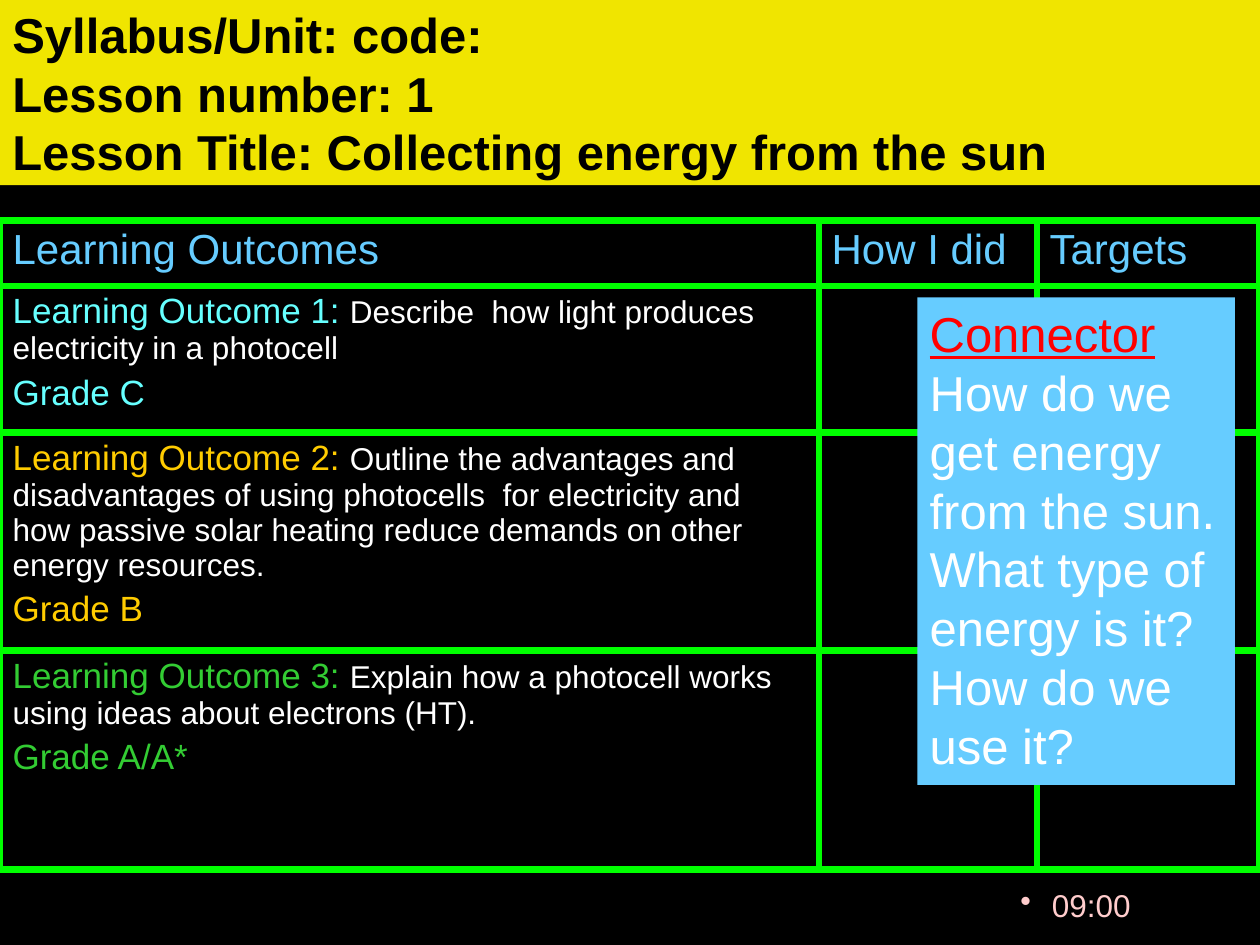
from lxml import etree
from pptx import Presentation
from pptx.dml.color import RGBColor
from pptx.enum.shapes import MSO_SHAPE
from pptx.enum.text import MSO_ANCHOR, MSO_AUTO_SIZE, PP_ALIGN
from pptx.oxml import parse_xml
from pptx.oxml.ns import nsdecls, qn
from pptx.util import Inches, Pt

RECT = MSO_SHAPE.RECTANGLE
TOP, MIDDLE = MSO_ANCHOR.TOP, MSO_ANCHOR.MIDDLE
GROW = MSO_AUTO_SIZE.SHAPE_TO_FIT_TEXT
LEFT, CENTER = PP_ALIGN.LEFT, PP_ALIGN.CENTER

BLACK = RGBColor(0x00, 0x00, 0x00)
WHITE = RGBColor(0xFF, 0xFF, 0xFF)
YELLOW = RGBColor(0xF0, 0xE5, 0x00)
GREEN = RGBColor(0x00, 0xFF, 0x00)
SKY = RGBColor(0x66, 0xCC, 0xFF)
RED = RGBColor(0xFF, 0x00, 0x00)
PINK = RGBColor(0xFF, 0xCC, 0xCC)
CYAN = RGBColor(0x66, 0xFF, 0xFF)
GOLD = RGBColor(0xFF, 0xCC, 0x00)
LEAF = RGBColor(0x33, 0xCC, 0x33)

# The slide is a grid of 100 columns by 75 rows
COLS, ROWS = 100, 75
UNIT = Inches(0.1)


def span(count):
    return round(count * UNIT)


class Board:
    """Holds the style and the current slide."""
    font = "Arial"
    edge = 4.5

    def __init__(self, deck):
        self.slide = deck.slides.add_slide(deck.slide_layouts[6])
        fill = self.slide.background.fill
        fill.solid()
        fill.fore_color.rgb = BLACK

    def style(self, font, size, color):
        font.name, font.size = self.font, Pt(size)
        font.color.rgb = color

    def label(self, para, text, size, color):
        para.text = text
        self.style(para.font, size, color)

    def add_run(self, para, text, size, color):
        run = para.add_run()
        run.text = text
        self.style(run.font, size, color)
        return run

    def panel(self, box, color, anchor):
        shape = self.slide.shapes.add_shape(RECT, *map(span, box))
        shape.shadow.inherit = False
        shape.fill.solid()
        shape.fill.fore_color.rgb = color
        shape.line.fill.background()
        frame = shape.text_frame
        frame.word_wrap, frame.vertical_anchor = True, anchor
        frame.paragraphs[0].alignment = LEFT
        return frame

    def bullet(self, box, text, size, color):
        frame = self.slide.shapes.add_textbox(*map(span, box)).text_frame
        frame.word_wrap = True
        para = frame.paragraphs[0]
        self.label(para, text, size, color)
        para.alignment = CENTER
        props = para._p.get_or_add_pPr()
        for key, cols in (("marL", 2.5), ("marR", 1.8), ("indent", -2.5)):
            props.set(key, str(span(cols)))
        mark = parse_xml(f'<a:buChar {nsdecls("a")} char="•"/>')
        props.insert_element_before(mark, "a:tabLst", "a:defRPr", "a:extLst")

    def border(self, cell):
        props = cell._tc.get_or_add_tcPr()
        for spot, side in enumerate(("lnL", "lnR", "lnT", "lnB")):
            line = etree.Element(qn(f"a:{side}"), w=str(Pt(self.edge)))
            fill = etree.SubElement(line, qn("a:solidFill"))
            etree.SubElement(fill, qn("a:srgbClr"), val=str(GREEN))
            props.insert(spot, line)

    def table(self, left, top, widths, heights):
        grid = self.slide.shapes.add_table(
            len(heights), len(widths), span(left), span(top),
            span(sum(widths)), span(sum(heights))).table
        grid.first_row = grid.horz_banding = False
        for col, width in zip(grid.columns, widths):
            col.width = span(width)
        for row, height in zip(grid.rows, heights):
            row.height = span(height)
        for cell in grid.iter_cells():
            cell.fill.solid()
            cell.fill.fore_color.rgb = BLACK
            self.border(cell)
        return grid

    def outcome(self, cell, head, goal, grade, color):
        frame = cell.text_frame
        first = frame.paragraphs[0]
        self.add_run(first, head, 20, color)
        self.add_run(first, goal, 18, WHITE)
        last = frame.add_paragraph()
        self.label(last, grade, 20, color)
        last.space_before = Pt(4)


HEADS = ("Learning Outcomes", "How I did", "Targets")
GOALS = (
    ("Describe  how light produces electricity in a photocell",
     "Grade C", CYAN),
    ("Outline the advantages and disadvantages of using photocells  for "
     "electricity and how passive solar heating reduce demands on other "
     "energy resources.", "Grade B", GOLD),
    ("Explain how a photocell works using ideas about electrons (HT).",
     "Grade A/A*", LEAF),
)


def main():
    deck = Presentation()
    deck.slide_width, deck.slide_height = span(COLS), span(ROWS)
    board = Board(deck)

    # Clock
    board.bullet((78.4, 69.8, 15.7, 5.2), "09:00", 18, PINK)

    # Title band
    title = board.panel((0, 0, COLS, 14.7), YELLOW, MIDDLE).paragraphs[0]
    board.label(title, "Syllabus/Unit: code:\vLesson number: 1\v"
                "Lesson Title: Collecting energy from the sun", 28, BLACK)
    title.font.bold = True

    # Outcomes table
    grid = board.table(0, 17.5, (65, 17.3, 17.7), (5.2, 11.6, 17.35, 17.35))
    for col, head in enumerate(HEADS):
        para = grid.cell(0, col).text_frame.paragraphs[0]
        board.label(para, head, 24, SKY)
    for row, (goal, grade, color) in enumerate(GOALS, 1):
        board.outcome(grid.cell(row, 0), f"Learning Outcome {row}: ",
                      goal, grade, color)

    # Connector question
    frame = board.panel((72.8, 23.6, 25.2, 38.7), SKY, TOP)
    frame.auto_size = GROW
    para = frame.paragraphs[0]
    board.add_run(para, "Connector ", 28, RED).font.underline = True
    board.add_run(para, "How do we get energy from the sun. What type of "
                  "energy is it? How do we use it?", 28, WHITE)

    deck.save("out.pptx")


if __name__ == "__main__":
    main()
